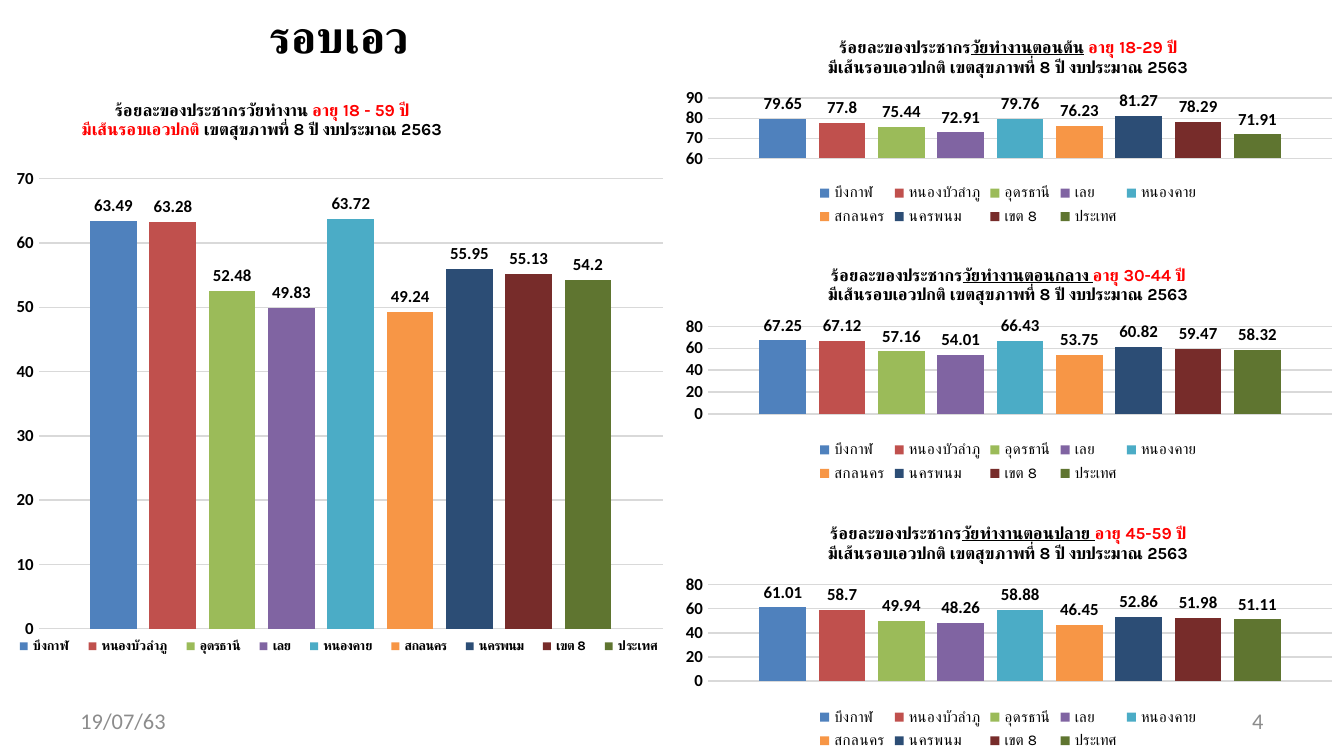
from lxml import etree
from pptx import Presentation
from pptx.chart.data import CategoryChartData
from pptx.dml.color import RGBColor
from pptx.enum.chart import XL_CHART_TYPE, XL_LABEL_POSITION, XL_LEGEND_POSITION, XL_TICK_MARK
from pptx.enum.text import MSO_ANCHOR, PP_ALIGN
from pptx.oxml.ns import qn
from pptx.util import Inches, Pt

COLUMN = XL_CHART_TYPE.COLUMN_CLUSTERED
OUTSIDE = XL_LABEL_POSITION.OUTSIDE_END
BOTTOM = XL_LEGEND_POSITION.BOTTOM
NO_TICK = XL_TICK_MARK.NONE
MIDDLE = MSO_ANCHOR.MIDDLE
LEFT, CENTER, RIGHT = PP_ALIGN.LEFT, PP_ALIGN.CENTER, PP_ALIGN.RIGHT

WIDTH = 10
HEIGHT = WIDTH * 9 / 16
PLOT_INSET, PLOT_WIDTH = 0.27, 4.64
BLACK, RED, GREY, GRID = "000000", "FF0000", "8C8C8C", "D9D9D9"
PROVINCES = [
    ("บึงกาฬ", "4F81BD"), ("หนองบัวลำภู", "C0504D"), ("อุดรธานี", "9BBB59"),
    ("เลย", "8064A2"), ("หนองคาย", "4BACC6"), ("สกลนคร", "F79646"),
    ("นครพนม", "2C4D75"), ("เขต 8", "772C2A"), ("ประเทศ", "5F7530"),
]
NUMBERS = {"size": 9, "bold": True, "name": "Calibri"}
HEADING = {"size": 9, "bold": True, "name": "Karla"}
SMALL_LEGEND = {"size": 8, "bold": False, "name": "Karla"}
FOOTER = {"size": 12, "name": "Calibri", "color": GREY}
WAIST, REGION = "มีเส้นรอบเอวปกติ", " เขตสุขภาพที่ 8 ปี งบประมาณ 2563"
PEOPLE = "ร้อยละของประชากร"


def group_title(group, age):
    return [[(PEOPLE, {}), (group, {"underline": True}), (age, {"color": RED})],
            [(WAIST + REGION, {})]]


CHARTS = [
    {"box": (0.02, 0.63, 5, 4.47), "plot": (1.33, 4.68), "axis": (0, 70, 10),
     "title": [[(PEOPLE + "วัยทำงาน ", {}), ("อายุ 18 - 59 ปี", {"color": RED})],
               [(WAIST, {"color": RED}), (REGION, {})]],
     "title_at": (0.58, 0.7), "legend_at": (0.03, 4.7, 4.98, 0.22),
     "legend": {"size": 7, "bold": True, "name": "Karla"},
     "values": [63.49, 63.28, 52.48, 49.83, 63.72, 49.24, 55.95, 55.13, 54.2]},
    {"box": (5, 0.15, 5, 1.57), "plot": (0.73, 1.18), "axis": (60, 90, 10),
     "title": group_title("วัยทำงานตอนต้น", " อายุ 18-29 ปี"), "legend": SMALL_LEGEND,
     "values": [79.65, 77.8, 75.44, 72.91, 79.76, 76.23, 81.27, 78.29, 71.91]},
    {"box": (5, 1.84, 5, 1.79), "plot": (2.43, 3.08), "axis": (0, 80, 20),
     "title": group_title("วัยทำงานตอนกลาง ", "อายุ 30-44 ปี"), "legend": SMALL_LEGEND,
     "values": [67.25, 67.12, 57.16, 54.01, 66.43, 53.75, 60.82, 59.47, 58.32]},
    {"box": (5, 3.76, 5, 1.86), "plot": (4.35, 5.07), "axis": (0, 80, 20),
     "title": group_title("วัยทำงานตอนปลาย ", "อายุ 45-59 ปี"), "legend": SMALL_LEGEND,
     "values": [61.01, 58.7, 49.94, 48.26, 58.88, 46.45, 52.86, 51.98, 51.11]},
]
TEXTS = [
    ("19/07/63", (0.5, 5.21, 2.33, 0.3), LEFT, FOOTER),
    ("4", (7.17, 5.21, 2.33, 0.3), RIGHT, FOOTER),
    ("รอบเอว", (1.36, 0.08, 2.33, 0.37), CENTER, {"size": 24, "name": "Karla", "bold": True}),
]


def rgb(value):
    return RGBColor.from_string(value)


def style(font, look):
    for key, value in {"color": BLACK, **look}.items():
        if key == "color":
            font.color.rgb = rgb(value)
        else:
            setattr(font, key, Pt(value) if key == "size" else value)
    etree.SubElement(font._rPr, qn("a:cs")).set("typeface", look["name"])


def place(parent, index, box, area, inner=False):
    for old in parent.findall(qn("c:layout")):
        parent.remove(old)
    left, top, width, height = box
    shares = [(area[0] - left) / width, (area[1] - top) / height]
    shares += [size / whole for size, whole in zip(area[2:], (width, height))]
    layout = etree.Element(qn("c:layout"))
    manual = etree.SubElement(layout, qn("c:manualLayout"))
    settings = [("layoutTarget", "inner")] if inner else []
    settings += [("xMode", "edge"), ("yMode", "edge"), *zip("xywh", shares)]
    for tag, value in settings:
        etree.SubElement(manual, qn("c:" + tag)).set("val", str(value))
    parent.insert(index, layout)


def add_bars(slide, item):
    box = item["box"]
    data = CategoryChartData()
    data.categories = ["1"]
    for (name, _), value in zip(PROVINCES, item["values"]):
        data.add_series(name, [value])
    chart = slide.shapes.add_chart(COLUMN, *map(Inches, box), data).chart
    style(chart.font, {"size": 10, "name": "Calibri"})

    chart.has_title = True
    tf = chart.chart_title.text_frame
    for i, line in enumerate(item["title"]):
        p = tf.add_paragraph() if i else tf.paragraphs[0]
        for text, look in line:
            r = p.add_run()
            r.text = text
            style(r.font, {**HEADING, **look})
    chart.chart_title.include_in_layout = False

    chart.has_legend = True
    chart.legend.position = BOTTOM
    chart.legend.include_in_layout = False
    style(chart.legend.font, item["legend"])

    chart.category_axis.visible = False
    axis = chart.value_axis
    axis.minimum_scale, axis.maximum_scale, axis.major_unit = item["axis"]
    axis.major_tick_mark = axis.minor_tick_mark = NO_TICK
    axis.format.line.fill.background()
    axis.major_gridlines.format.line.color.rgb = rgb(GRID)
    axis.major_gridlines.format.line.width = Pt(0.75)
    style(axis.tick_labels.font, NUMBERS)

    plot = chart.plots[0]
    plot.gap_width, plot.overlap, plot.vary_by_categories = 219, -27, False
    for series, (_, color) in zip(plot.series, PROVINCES):
        series.format.fill.solid()
        series.format.fill.fore_color.rgb = rgb(color)
        labels = series.data_labels
        labels.show_value = True
        labels.position = OUTSIDE
        style(labels.font, NUMBERS)

    top, bottom = item["plot"]
    area = (box[0] + PLOT_INSET, top, PLOT_WIDTH, bottom - top)
    place(chart._chartSpace.chart.plotArea, 0, box, area, inner=True)
    for key, part in (("title_at", chart.chart_title), ("legend_at", chart.legend)):
        if key in item:
            place(part._element, 1, box, item[key])


def add_text(slide, text, box, align, look):
    tf = slide.shapes.add_textbox(*map(Inches, box)).text_frame
    tf.word_wrap = True
    tf.vertical_anchor = MIDDLE
    p = tf.paragraphs[0]
    p.alignment = align
    r = p.add_run()
    r.text = text
    style(r.font, look)


def main():
    prs = Presentation()
    prs.slide_width, prs.slide_height = Inches(WIDTH), Inches(HEIGHT)
    s = prs.slides.add_slide(prs.slide_layouts[6])
    for item in CHARTS:
        add_bars(s, item)
    for entry in TEXTS:
        add_text(s, *entry)
    prs.save("out.pptx")


if __name__ == "__main__":
    main()
